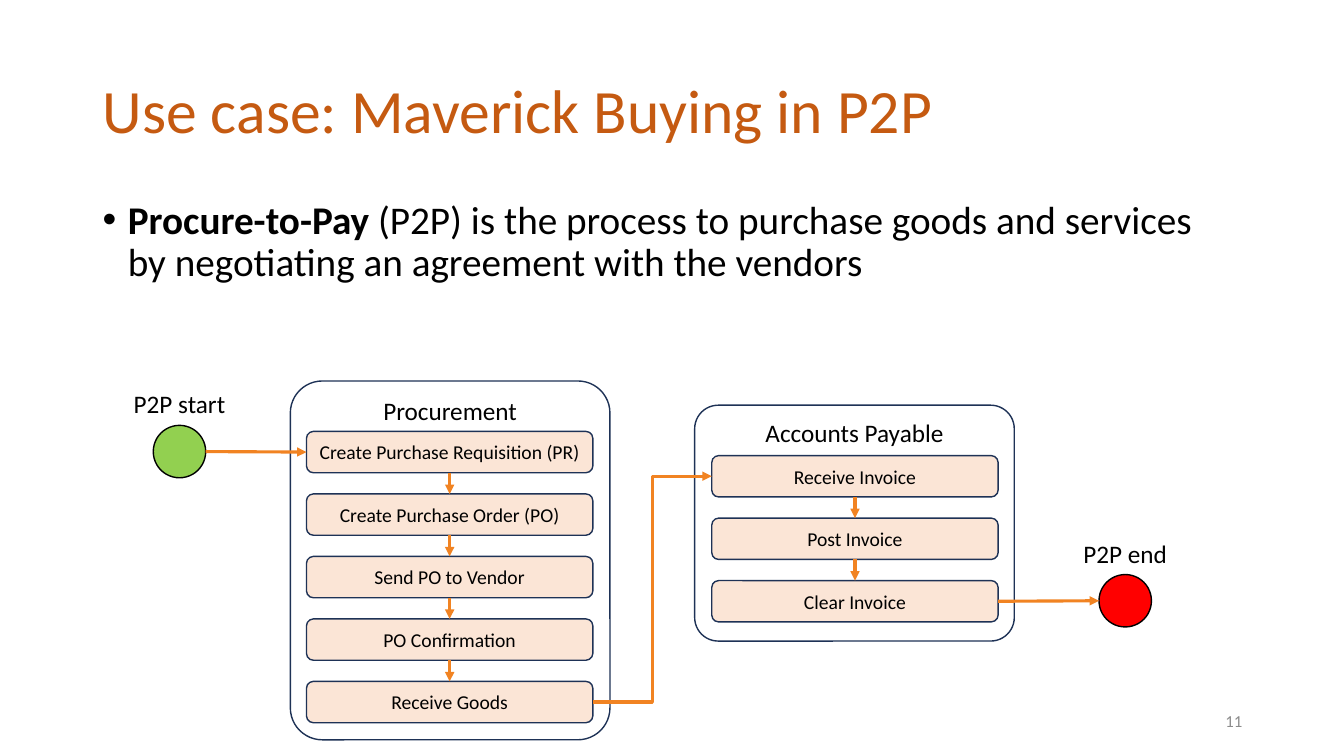
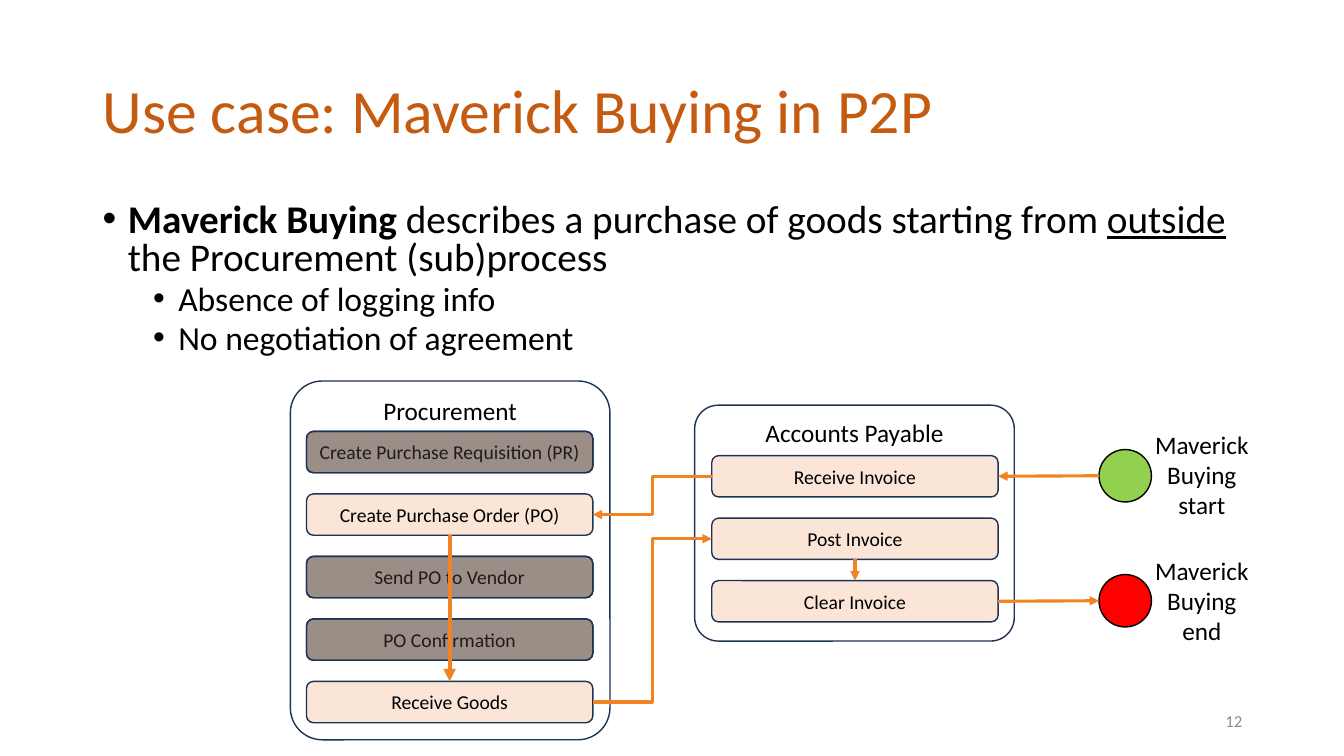
from dataclasses import dataclass
from typing import NamedTuple

import pptx
import pptx.dml.color
import pptx.enum.shapes
import pptx.enum.text
import pptx.oxml
import pptx.oxml.ns
import pptx.util
from lxml import etree

Inches = pptx.util.Inches
Pt = pptx.util.Pt
RGBColor = pptx.dml.color.RGBColor
ShapeType = pptx.enum.shapes.MSO_SHAPE
ConnectorType = pptx.enum.shapes.MSO_CONNECTOR
Align = pptx.enum.text.PP_ALIGN
Anchor = pptx.enum.text.MSO_ANCHOR
qn = pptx.oxml.ns.qn

# Shared style
FONT = "Calibri"
BLACK = RGBColor(0x00, 0x00, 0x00)
WHITE = RGBColor(0xFF, 0xFF, 0xFF)
TITLE_ORANGE = RGBColor(0xC5, 0x5A, 0x11)
ARROW_ORANGE = RGBColor(0xF1, 0x83, 0x22)
STEP_PEACH = RGBColor(0xFB, 0xE5, 0xD6)
OUTLINE_NAVY = RGBColor(0x1E, 0x32, 0x56)
START_GREEN = RGBColor(0x92, 0xD0, 0x50)
END_RED = RGBColor(0xFF, 0x00, 0x00)
SKIPPED_GRAY = RGBColor(0x3B, 0x38, 0x38)
NUMBER_GRAY = RGBColor(0x8C, 0x8C, 0x8C)

TITLE = "Use case: Maverick Buying in P2P"
STEP_WIDTH, STEP_HEIGHT, STEP_PITCH = 2.84, 0.41, 0.62
EVENT_SIZE = 0.52
TOP, LEFT, BOTTOM, RIGHT = range(4)


class Box(NamedTuple):
    left: float
    top: float
    width: float
    height: float

    def lengths(self) -> list:
        return [Inches(value) for value in self]


class Run(NamedTuple):
    text: str
    bold: bool = False
    underline: bool = False


class Bullet(NamedTuple):
    runs: list[Run]
    level: int = 0


@dataclass
class Department:
    name: str
    box: Box
    step_left: float
    step_top: float
    steps: list[str]


@dataclass
class Event:
    key: str
    left: float
    top: float
    color: RGBColor
    label: list[str]
    label_box: Box


@dataclass
class Arrow:
    begin: str
    begin_side: int
    end: str
    end_side: int
    elbow: bool = False
    width: float = 2.25


@dataclass
class ProcessSlide:
    number: int
    body_top: float
    line_spacing: float
    bullets: list[Bullet]
    events: list[Event]
    arrows: list[Arrow]
    skipped: list[str]


DEPARTMENTS = [
    Department("Accounts Payable", Box(6.89, 4.02, 3.17, 2.34), 7.06, 4.52,
               ["Receive Invoice", "Post Invoice", "Clear Invoice"]),
    Department("Procurement", Box(2.88, 3.78, 3.17, 3.56), 3.04, 4.28,
               ["Create Purchase Requisition (PR)", "Create Purchase Order (PO)",
                "Send PO to Vendor", "PO Confirmation", "Receive Goods"]),
]


def chain(steps: list[str]) -> list[Arrow]:
    """Downward arrows through consecutive steps."""
    return [Arrow(upper, BOTTOM, lower, TOP) for upper, lower in zip(steps, steps[1:])]


SLIDES = [
    ProcessSlide(
        number=11, body_top=1.94, line_spacing=0.9,
        bullets=[Bullet([
            Run("Procure-to-Pay", bold=True),
            Run(" (P2P) is the process to purchase goods and services "
                "by negotiating an agreement with the vendors")])],
        events=[
            Event("start", 1.52, 4.22, START_GREEN, ["P2P start"], Box(1.02, 3.8, 1.52, 0.4)),
            Event("end", 10.9, 5.7, END_RED, ["P2P end"], Box(10.4, 5.29, 1.52, 0.4)),
        ],
        arrows=[
            *(arrow for department in DEPARTMENTS for arrow in chain(department.steps)),
            Arrow("Receive Goods", RIGHT, "Receive Invoice", LEFT, elbow=True),
            Arrow("start", RIGHT, "Create Purchase Requisition (PR)", LEFT),
            Arrow("Clear Invoice", RIGHT, "end", LEFT),
        ],
        skipped=[]),
    ProcessSlide(
        number=12, body_top=1.97, line_spacing=0.8,
        bullets=[
            Bullet([
                Run("Maverick Buying", bold=True),
                Run(" describes a purchase of goods starting from "),
                Run("outside", underline=True),
                Run(" the Procurement (sub)process")]),
            Bullet([Run("Absence of logging info")], level=1),
            Bullet([Run("No negotiation of agreement")], level=1),
        ],
        events=[
            Event("start", 10.9, 4.46, START_GREEN, ["Maverick Buying", "start"],
                  Box(11.16, 4.21, 1.52, 1.01)),
            Event("end", 10.9, 5.7, END_RED, ["Maverick Buying", "end"],
                  Box(11.16, 5.46, 1.52, 1.01)),
        ],
        arrows=[
            Arrow("start", LEFT, "Receive Invoice", RIGHT),
            Arrow("Receive Invoice", LEFT, "Create Purchase Order (PO)", RIGHT, elbow=True),
            Arrow("Create Purchase Order (PO)", BOTTOM, "Receive Goods", TOP, width=3),
            Arrow("Receive Goods", RIGHT, "Post Invoice", LEFT, elbow=True),
            Arrow("Post Invoice", BOTTOM, "Clear Invoice", TOP),
            Arrow("Clear Invoice", RIGHT, "end", LEFT),
        ],
        skipped=["Create Purchase Requisition (PR)", "Send PO to Vendor", "PO Confirmation"]),
]


def format_font(font, size: float, color: RGBColor = BLACK) -> None:
    font.name = FONT
    font.size = Pt(size)
    font.color.rgb = color


def set_lines(shape, lines: list[str], size: float, color: RGBColor = BLACK,
              alignment=Align.CENTER, anchor=Anchor.TOP) -> None:
    frame = shape.text_frame
    frame.word_wrap = True
    frame.vertical_anchor = anchor
    frame.text = "\n".join(lines)
    for paragraph in frame.paragraphs:
        paragraph.alignment = alignment
        for run in paragraph.runs:
            format_font(run.font, size, color)


def add_filled_shape(slide, kind, box: Box, fill: RGBColor, outline: RGBColor = OUTLINE_NAVY):
    shape = slide.shapes.add_shape(kind, *box.lengths())
    shape.shadow.inherit = False
    shape.fill.solid()
    shape.fill.fore_color.rgb = fill
    shape.line.color.rgb = outline
    shape.line.width = Pt(1)
    return shape


def add_label(slide, box: Box, lines: list[str], size: float, **style) -> None:
    set_lines(slide.shapes.add_textbox(*box.lengths()), lines, size, **style)


def add_title(slide) -> None:
    title = slide.shapes.title
    title.left, title.top, title.width, title.height = Box(0.92, 0.4, 11.4, 1.45).lengths()
    set_lines(title, [TITLE], 44, TITLE_ORANGE, Align.LEFT, Anchor.MIDDLE)
    title.text_frame.paragraphs[0].line_spacing = 0.9


def add_bullets(slide, top: float, line_spacing: float, bullets: list[Bullet]) -> None:
    frame = slide.shapes.add_textbox(*Box(0.92, top, 11.4, 1.79).lengths()).text_frame
    frame.word_wrap = True
    for index, bullet in enumerate(bullets):
        paragraph = frame.add_paragraph() if index else frame.paragraphs[0]
        paragraph.level = bullet.level
        properties = paragraph._p.get_or_add_pPr()
        properties.set("marL", str(Inches(0.25 + 0.5 * bullet.level)))
        properties.set("indent", str(Inches(-0.25)))
        etree.SubElement(properties, qn("a:buFont")).set("typeface", "Arial")
        etree.SubElement(properties, qn("a:buChar")).set("char", "•")
        paragraph.line_spacing = line_spacing
        paragraph.space_before = Pt(5 if index else 0)
        for part in bullet.runs:
            run = paragraph.add_run()
            run.text = part.text
            format_font(run.font, 28 - 4 * bullet.level)
            run.font.bold = part.bold
            run.font.underline = part.underline


def add_department(slide, department: Department) -> dict:
    """Draw the frame and its steps; return the step shapes by name."""
    frame = add_filled_shape(slide, ShapeType.ROUNDED_RECTANGLE, department.box, WHITE)
    frame.adjustments[0] = 0.1
    set_lines(frame, [department.name], 18)
    shapes = {}
    for index, step in enumerate(department.steps):
        box = Box(department.step_left, department.step_top + index * STEP_PITCH,
                  STEP_WIDTH, STEP_HEIGHT)
        shapes[step] = add_filled_shape(slide, ShapeType.ROUNDED_RECTANGLE, box, STEP_PEACH)
        set_lines(shapes[step], [step], 14, anchor=Anchor.MIDDLE)
    return shapes


def add_event(slide, event: Event):
    box = Box(event.left, event.top, EVENT_SIZE, EVENT_SIZE)
    add_label(slide, event.label_box, event.label, 18)
    return add_filled_shape(slide, ShapeType.OVAL, box, event.color, BLACK)


def shade_step(slide, step) -> None:
    """Lay a half-transparent cover over a skipped step."""
    box = Box(*(length.inches for length in (step.left, step.top, step.width, step.height)))
    cover = add_filled_shape(slide, ShapeType.ROUNDED_RECTANGLE, box, SKIPPED_GRAY)
    color = cover.element.spPr.find(qn("a:solidFill")).find(qn("a:srgbClr"))
    etree.SubElement(color, qn("a:alpha")).set("val", "50000")


def side_point(shape, side: int) -> tuple[int, int]:
    across = {LEFT: 0, RIGHT: shape.width}.get(side, shape.width // 2)
    down = {TOP: 0, BOTTOM: shape.height}.get(side, shape.height // 2)
    return shape.left + across, shape.top + down


def add_arrow(slide, arrow: Arrow, shapes: dict) -> None:
    begin, end = shapes[arrow.begin], shapes[arrow.end]
    kind = ConnectorType.ELBOW if arrow.elbow else ConnectorType.STRAIGHT
    connector = slide.shapes.add_connector(
        kind, *side_point(begin, arrow.begin_side), *side_point(end, arrow.end_side))
    if begin.auto_shape_type != ShapeType.OVAL:
        connector.begin_connect(begin, arrow.begin_side)
    if end.auto_shape_type != ShapeType.OVAL:
        connector.end_connect(end, arrow.end_side)
    connector.line.color.rgb = ARROW_ORANGE
    connector.line.width = Pt(arrow.width)
    properties = connector.element.spPr
    etree.SubElement(properties.find(qn("a:ln")), qn("a:tailEnd")).set("type", "triangle")
    etree.SubElement(properties, qn("a:effectLst"))


def add_process_slide(presentation, content: ProcessSlide) -> None:
    slide = presentation.slides.add_slide(presentation.slide_layouts[5])
    add_title(slide)
    add_bullets(slide, content.body_top, content.line_spacing, content.bullets)
    # Process diagram
    shapes = {}
    for department in DEPARTMENTS:
        shapes.update(add_department(slide, department))
    for event in content.events:
        shapes[event.key] = add_event(slide, event)
    for step in content.skipped:
        shade_step(slide, shapes[step])
    for arrow in content.arrows:
        add_arrow(slide, arrow, shapes)
    # Slide number
    add_label(slide, Box(9.42, 6.95, 3, 0.4), [str(content.number)], 12,
              color=NUMBER_GRAY, alignment=Align.RIGHT, anchor=Anchor.MIDDLE)


def main() -> None:
    presentation = pptx.Presentation()
    presentation.slide_width = Inches(13.33)
    presentation.slide_height = Inches(7.5)
    for content in SLIDES:
        add_process_slide(presentation, content)
    presentation.save("out.pptx")


if __name__ == "__main__":
    main()
